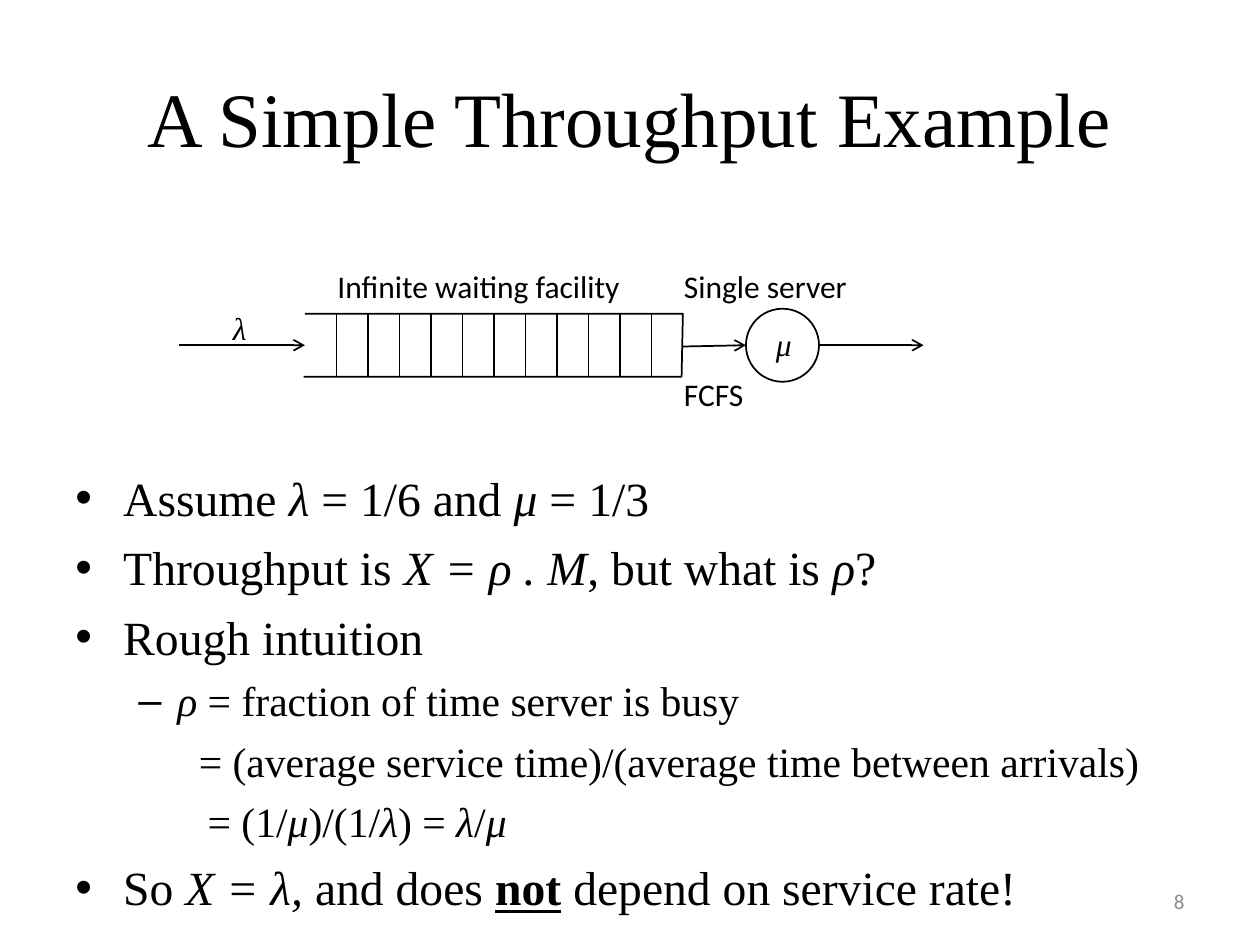
from typing import NamedTuple

from lxml import etree
from pptx import Presentation
from pptx import util as u
from pptx.dml.color import RGBColor
from pptx.enum import shapes, text
from pptx.oxml.ns import qn

PX = 9144  # EMU per px, 100 px to the inch
COLORS = {"ink": "000000", "page_number": "8C8C8C"}
SERIF, SANS = "Times New Roman", "Calibri"
QUEUE_LEFT, QUEUE_RIGHT, QUEUE_TOP, QUEUE_BOTTOM = 242, 542, 249, 299
SLOT = 25


class Label(NamedTuple):
    words: str
    left: int
    top: int
    width: int
    font: str


class Line(NamedTuple):
    start: tuple[int, int]
    end: tuple[int, int]
    arrow: bool = False


class Point(NamedTuple):
    words: str
    size: float = 27.2
    before: float = 7
    indent: int = 38
    hang: int = 38
    bullet: str = "•"


LABELS = [
    Label("*λ*", 175, 240, 33, SERIF),
    Label("*μ*", 606, 253, 33, SERIF),
    Label("Single server", 533, 207, 155, SANS),
    Label("FCFS", 533, 293, 117, SANS),
    Label("Infinite waiting facility", 258, 207, 258, SANS),
]
FLOWS = [
    Line((142, 274), (QUEUE_LEFT, 274), arrow=True),
    Line((QUEUE_RIGHT, 275), (592, 274), arrow=True),
    Line((650, 274), (733, 274), arrow=True),
]
SLOTS = [Line((x, QUEUE_TOP), (x, QUEUE_BOTTOM))
         for x in range(QUEUE_LEFT + SLOT, QUEUE_RIGHT, SLOT)]
SUB = {"size": 23.8, "before": 6}
POINTS = [
    Point("Assume *λ* = 1/6 and *μ* = 1/3"),
    Point("Throughput is *X = ρ . Μ*, but what is *ρ*?"),
    Point("Rough intuition"),
    Point("*ρ* = fraction of time server is busy", indent=81, hang=31, bullet="–", **SUB),
    Point("= (average service time)/(average time between arrivals)",
          indent=98, hang=0, bullet="", **SUB),
    Point("= (1/*μ*)/(1/*λ*) = *λ*/*μ*", indent=105, hang=0, bullet="", **SUB),
    Point("So *X = λ,* and does _not_ depend on service rate!"),
]


def color(name: str) -> RGBColor:
    return RGBColor.from_string(COLORS[name])


def write(paragraph, words: str, *, size: float = 18, font: str = SERIF,
          ink: str = "ink", align=text.PP_ALIGN.LEFT) -> None:
    """Add runs; *stars* mark italics and _underscores_ mark bold underline."""
    paragraph.alignment = align
    for i, part in enumerate(words.split("*")):
        for j, piece in enumerate(part.split("_")):
            if not piece:
                continue
            run = paragraph.add_run()
            run.text = piece
            run.font.size, run.font.name = u.Pt(size), font
            run.font.italic = i % 2 == 1
            run.font.bold = run.font.underline = j % 2 == 1
            run.font.color.rgb = color(ink)


def add_frame(slide, left: int, top: int, width: int, height: int, wrap: bool = True):
    box = slide.shapes.add_textbox(left * PX, top * PX, width * PX, height * PX)
    box.text_frame.word_wrap = wrap
    return box.text_frame


def outline(shape) -> None:
    shape.shadow.inherit = False
    shape.fill.background()
    shape.line.color.rgb, shape.line.width = color("ink"), u.Pt(1)


def add_line(slide, line: Line) -> None:
    ends = [n * PX for n in (*line.start, *line.end)]
    connector = slide.shapes.add_connector(shapes.MSO_CONNECTOR.STRAIGHT, *ends)
    connector.line.color.rgb, connector.line.width = color("ink"), u.Pt(1)
    if line.arrow:
        etree.SubElement(connector.line._get_or_add_ln(), qn("a:tailEnd"), type="arrow")
    etree.SubElement(connector._element.spPr, qn("a:effectLst"))


def add_queue(slide) -> None:
    builder = slide.shapes.build_freeform(QUEUE_LEFT, QUEUE_TOP, scale=PX)
    builder.add_line_segments(
        [(QUEUE_RIGHT, QUEUE_TOP), (QUEUE_RIGHT - 1, QUEUE_BOTTOM),
         (QUEUE_LEFT - 1, QUEUE_BOTTOM)], close=False)
    outline(builder.convert_to_shape())


def add_point(paragraph, point: Point) -> None:
    paragraph.space_before = u.Pt(point.before)
    write(paragraph, point.words, size=point.size)
    props = paragraph._p.get_or_add_pPr()
    props.set("marL", str(point.indent * PX))
    props.set("indent", str(-point.hang * PX))
    if point.bullet:
        etree.SubElement(props, qn("a:buFont"), typeface="Arial")
        etree.SubElement(props, qn("a:buChar"), char=point.bullet)


def main() -> None:
    prs = Presentation()
    prs.slide_width, prs.slide_height = 1000 * PX, 750 * PX
    slide = prs.slides.add_slide(prs.slide_layouts[5])

    title = slide.shapes.title
    title.left, title.top, title.width, title.height = (n * PX for n in (50, 30, 900, 125))
    title.text_frame.vertical_anchor = text.MSO_ANCHOR.MIDDLE
    write(title.text_frame.paragraphs[0], "A Simple Throughput Example",
          size=44, align=text.PP_ALIGN.CENTER)

    body = add_frame(slide, 50, 367, 950, 303)
    for i, point in enumerate(POINTS):
        add_point(body.add_paragraph() if i else body.paragraphs[0], point)

    number = add_frame(slide, 717, 695, 233, 40)
    number.vertical_anchor = text.MSO_ANCHOR.MIDDLE
    write(number.paragraphs[0], "8", size=12, font=SANS, ink="page_number",
          align=text.PP_ALIGN.RIGHT)

    add_queue(slide)
    for line in SLOTS + FLOWS:
        add_line(slide, line)
    outline(slide.shapes.add_shape(shapes.MSO_SHAPE.OVAL,
                                   592 * PX, 245 * PX, 58 * PX, 58 * PX))
    for label in LABELS:
        frame = add_frame(slide, label.left, label.top, label.width, 40, wrap=False)
        write(frame.paragraphs[0], label.words, font=label.font)

    prs.save("out.pptx")


if __name__ == "__main__":
    main()
